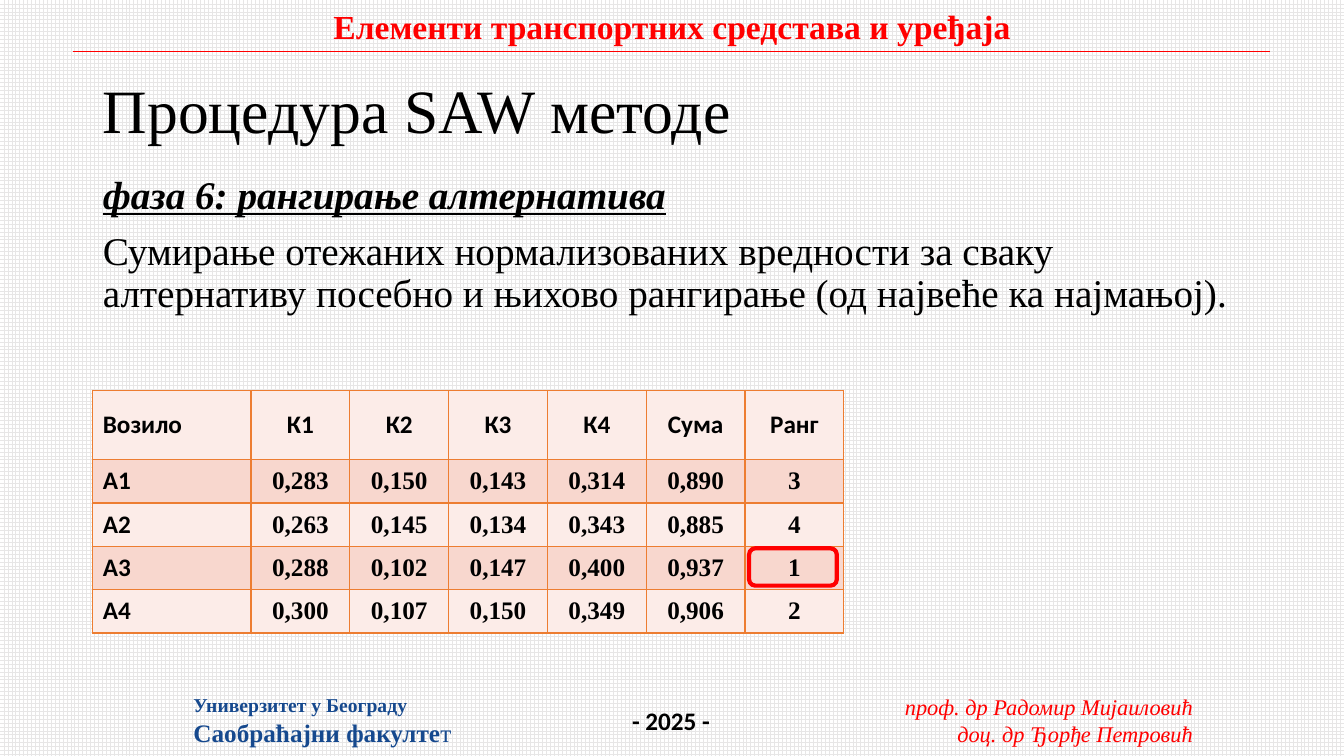
"""Build the slide on ranking alternatives with the SAW method."""
import pptx
import pptx.dml.color
import pptx.enum.dml
import pptx.enum.shapes
import pptx.enum.text
import pptx.oxml
import pptx.oxml.ns
import pptx.util

RGBColor = pptx.dml.color.RGBColor
RED = RGBColor(0xFF, 0x00, 0x00)
BLACK = RGBColor(0x00, 0x00, 0x00)
WHITE = RGBColor(0xFF, 0xFF, 0xFF)
GRAY = RGBColor(0xE7, 0xE6, 0xE6)
BLUE = RGBColor(0x16, 0x49, 0x8E)
ORANGE = RGBColor(0xED, 0x7D, 0x31)
PALE = RGBColor(0xFC, 0xEC, 0xE8)
PINK = RGBColor(0xF8, 0xD7, 0xCE)
SERIF, SANS = "Times New Roman", "Calibri"

ALIGN = pptx.enum.text.PP_ALIGN
MIDDLE = pptx.enum.text.MSO_ANCHOR.MIDDLE
INCH = pptx.util.Inches
WIDE, HIGH = 13.33, 7.5
LEFT, BODY = 0.92, 11.5
TOP, HEAD, ROW = 3.87, 0.69, 0.43
FIRST, COL = 1.57, 0.98
SCORES = [
    ["Возило", "К1", "К2", "К3", "К4", "Сума", "Ранг"],
    ["А1", "0,283", "0,150", "0,143", "0,314", "0,890", "3"],
    ["А2", "0,263", "0,145", "0,134", "0,343", "0,885", "4"],
    ["А3", "0,288", "0,102", "0,147", "0,400", "0,937", "1"],
    ["А4", "0,300", "0,107", "0,150", "0,349", "0,906", "2"],
]


def style(run, size, color=BLACK, face=SERIF, bold=False, slant=False):
    font = run.font
    font.name, font.size = face, pptx.util.Pt(size)
    font.bold, font.italic = bold, slant
    font.color.rgb = color


def place(shape, left, top, width, height):
    shape.left, shape.top = INCH(left), INCH(top)
    shape.width, shape.height = INCH(width), INCH(height)


def label(slide, box, lines, sizes, align=ALIGN.LEFT, **look):
    frame = slide.shapes.add_textbox(*map(INCH, box)).text_frame
    frame.word_wrap = False
    frame.auto_size = pptx.enum.text.MSO_AUTO_SIZE.SHAPE_TO_FIT_TEXT
    frame.text = "\n".join(lines)
    for par, size in zip(frame.paragraphs, sizes):
        par.alignment = align
        style(par.runs[0], size, **look)
    return frame


def frame_page(slide):
    fill = slide.background.fill
    fill.patterned()
    fill.pattern = pptx.enum.dml.MSO_PATTERN.LARGE_GRID
    fill.fore_color.rgb, fill.back_color.rgb = GRAY, WHITE

    label(slide, (8.83, 6.83, 3.1, 0.64),
          ["проф. др Радомир Мијаиловић", "доц. др Ђорђе Петровић"],
          [16, 16], ALIGN.RIGHT, color=RED, slant=True)
    rule = slide.shapes.add_connector(
        pptx.enum.shapes.MSO_CONNECTOR.STRAIGHT,
        *map(INCH, (0.72, 0.51, 12.6, 0.51)))
    rule.line.color.rgb, rule.line.width = RED, pptx.util.Pt(0.5)
    pptx.oxml.ns.qn("a:effectLst")
    rule._element.spPr.append(pptx.oxml.parse_xml(
        f"<a:effectLst {pptx.oxml.ns.nsdecls('a')}/>"))
    label(slide, (3.17, 0.01, 6.99, 0.5),
          ["Елементи транспортних средстава и уређаја"],
          [24], ALIGN.CENTER, color=RED, bold=True)
    label(slide, (6.17, 6.95, 0.98, 0.4), ["- 2025 -"], [18],
          face=SANS, bold=True)
    school = label(slide, (1.82, 6.83, 2.79, 0.64),
                   ["Универзитет у Београду", "Саобраћајни факулте"],
                   [14, 18], color=BLUE, bold=True)
    tail = school.paragraphs[1].add_run()
    tail.text = "т"
    style(tail, 18, BLUE)


def write_text(slide):
    title, body = slide.placeholders
    place(title, LEFT, 0.4, BODY, 1.45)
    title.text_frame.text = "Процедура SAW методе"
    title.text_frame.vertical_anchor = MIDDLE
    head = title.text_frame.paragraphs[0]
    head.alignment, head.line_spacing = ALIGN.LEFT, 0.9
    style(head.runs[0], 44)

    place(body, LEFT, 1.69, BODY, 5.06)
    frame = body.text_frame
    frame.auto_size = pptx.enum.text.MSO_AUTO_SIZE.NONE
    frame.text = (
        "фаза 6: рангирање алтернатива\n"
        "Сумирање отежаних нормализованих вредности за сваку алтернативу "
        "посебно и њихово рангирање (од највеће ка најмањој).")
    for i, par in enumerate(frame.paragraphs):
        props = par._p.get_or_add_pPr()
        props.set("marL", "0")
        props.set("indent", "0")
        props.append(pptx.oxml.parse_xml(
            f"<a:buNone {pptx.oxml.ns.nsdecls('a')}/>"))
        par.line_spacing = 0.9
        par.space_before = pptx.util.Pt(10 * i)
        style(par.runs[0], 28, bold=i == 0, slant=i == 0)
        par.runs[0].font.underline = i == 0


def edge(cell):
    props = cell._tc.get_or_add_tcPr()
    for side in "LRTB":
        props.append(pptx.oxml.parse_xml(
            f'<a:ln{side} {pptx.oxml.ns.nsdecls("a")} w="12700"><a:solidFill>'
            f'<a:srgbClr val="{ORANGE}"/></a:solidFill></a:ln{side}>'))


def fill_cell(cell, text, row, col):
    edge(cell)
    cell.fill.solid()
    cell.fill.fore_color.rgb = PINK if row % 2 else PALE
    cell.vertical_anchor = MIDDLE
    score = row > 0 and col > 0
    if score:
        cell.margin_left = cell.margin_right = INCH(0.07)
        cell.margin_top = cell.margin_bottom = 0
    cell.text_frame.text = text
    par = cell.text_frame.paragraphs[0]
    par.alignment = ALIGN.CENTER if col else ALIGN.LEFT
    style(par.runs[0], 18, face=SERIF if score else SANS, bold=True)


def add_scores(slide):
    rows, cols = len(SCORES), len(SCORES[0])
    size = FIRST + COL * (cols - 1), HEAD + ROW * (rows - 1)
    table = slide.shapes.add_table(
        rows, cols, *map(INCH, (LEFT, TOP, *size))).table
    for c, column in enumerate(table.columns):
        column.width = INCH(COL if c else FIRST)
    for r, line in enumerate(SCORES):
        table.rows[r].height = INCH(ROW if r else HEAD)
        for c, text in enumerate(line):
            fill_cell(table.cell(r, c), text, r, c)


def mark_best(slide):
    best = [line[-1] for line in SCORES].index("1")
    left = LEFT + FIRST + COL * (len(SCORES[0]) - 2) + 0.04
    top = TOP + HEAD + ROW * (best - 1) + 0.02
    ring = slide.shapes.add_shape(
        pptx.enum.shapes.MSO_SHAPE.ROUNDED_RECTANGLE,
        *map(INCH, (left, top, 0.87, 0.37)))
    ring.shadow.inherit = False
    ring.fill.background()
    ring.line.color.rgb, ring.line.width = RED, pptx.util.Pt(3)


def main():
    deck = pptx.Presentation()
    deck.slide_width, deck.slide_height = INCH(WIDE), INCH(HIGH)
    slide = deck.slides.add_slide(deck.slide_layouts[1])
    frame_page(slide)
    write_text(slide)
    add_scores(slide)
    mark_best(slide)
    deck.save("out.pptx")


if __name__ == "__main__":
    main()
